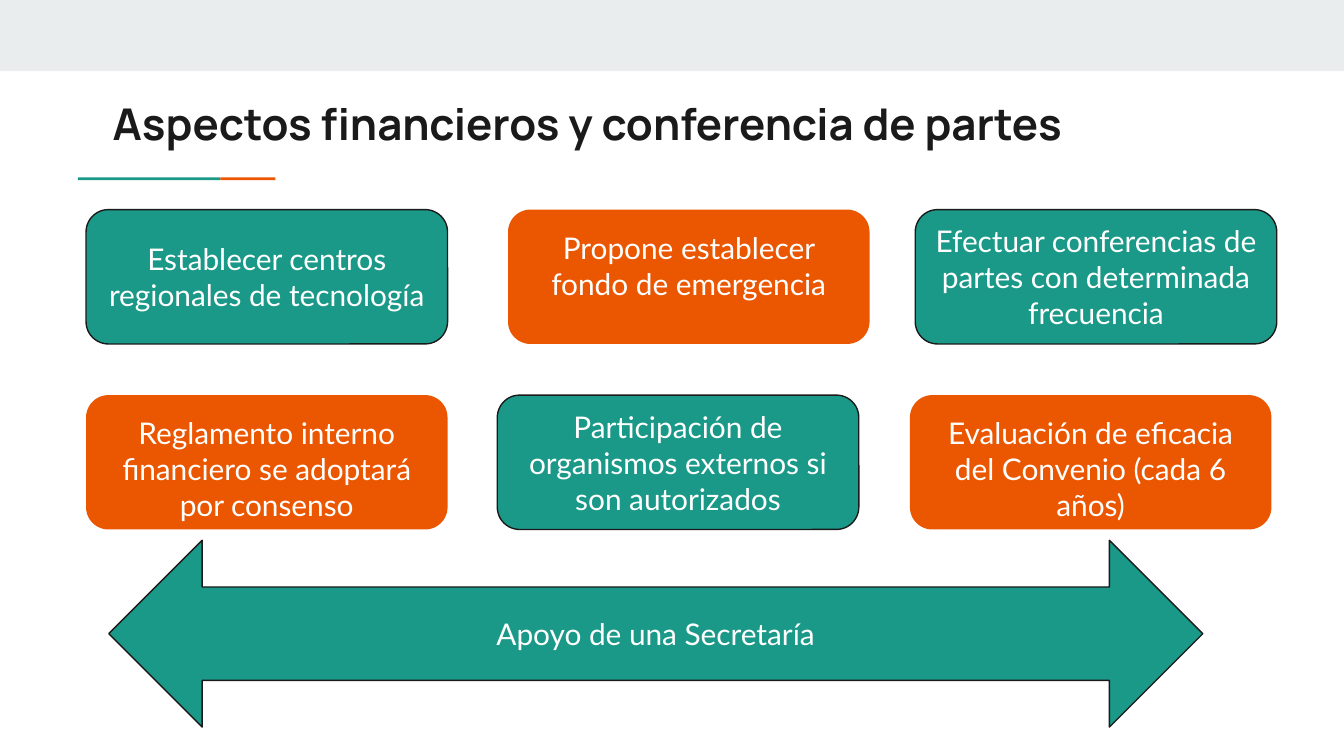
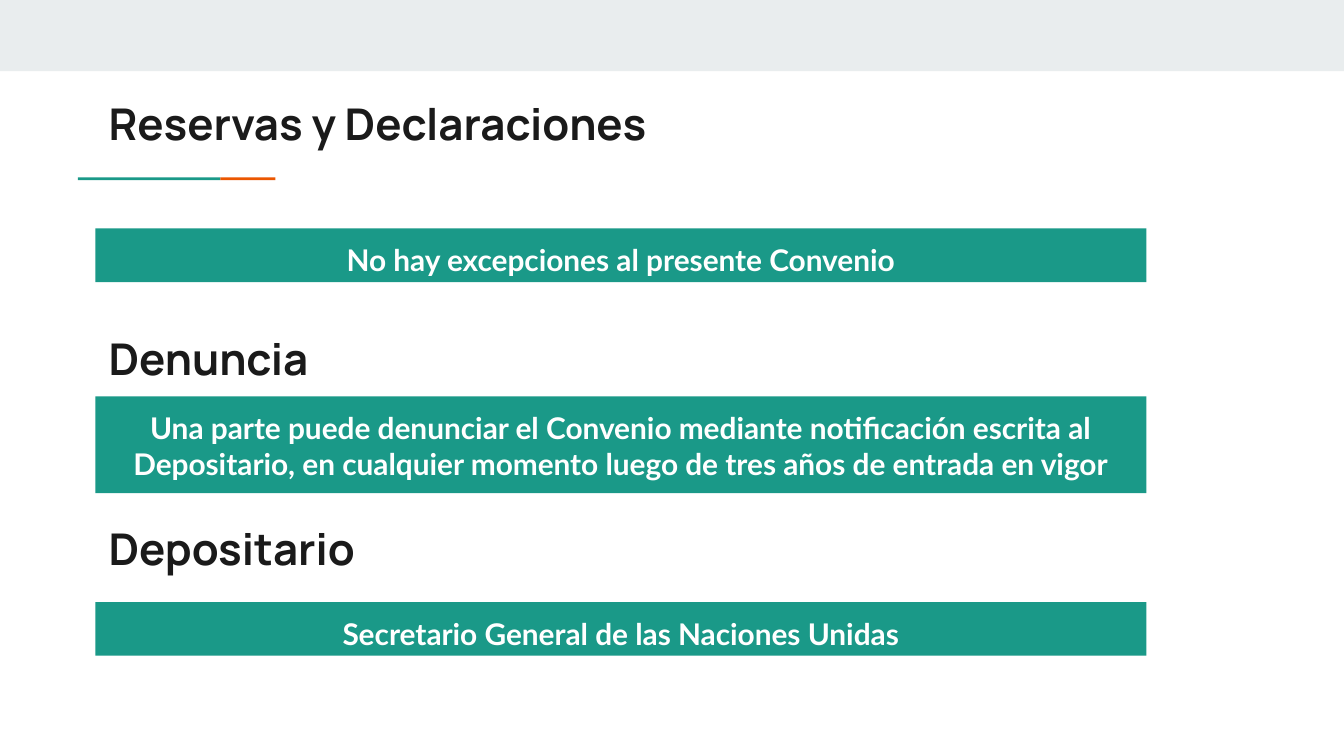
from dataclasses import dataclass

from pptx import Presentation
from pptx.dml.color import RGBColor
from pptx.enum.shapes import MSO_SHAPE
from pptx.enum.text import MSO_ANCHOR, PP_ALIGN
from pptx.util import Inches, Pt

RECT = MSO_SHAPE.RECTANGLE
CARD = MSO_SHAPE.FLOWCHART_ALTERNATE_PROCESS
ARROW = MSO_SHAPE.LEFT_RIGHT_ARROW
TOP, MIDDLE = MSO_ANCHOR.TOP, MSO_ANCHOR.MIDDLE
LEFT, CENTER = PP_ALIGN.LEFT, PP_ALIGN.CENTER


@dataclass(frozen=True)
class Theme:
    teal: RGBColor = RGBColor(0x1A, 0x99, 0x88)
    orange: RGBColor = RGBColor(0xEB, 0x56, 0x00)
    ink: RGBColor = RGBColor(0x1A, 0x1A, 0x1A)
    white: RGBColor = RGBColor(0xFF, 0xFF, 0xFF)
    band: RGBColor = RGBColor(0xE9, 0xED, 0xEE)
    title_font: str = "Manrope"
    body_font: str = "Lato"
    title_size: float = 23.4
    body_size: float = 16
    outline: float = 0.75
    inset: float = 0.1


THEME = Theme()
SLIDE_W = 10
SLIDE_H = SLIDE_W * 9 / 16
TITLE_W, TITLE_H = 8.41, 0.59

TITLE_STYLE = {"name": THEME.title_font, "size": Pt(THEME.title_size), "bold": True}
BODY_STYLE = {"name": THEME.body_font, "size": Pt(THEME.body_size), "bold": False}
STRONG_STYLE = {**BODY_STYLE, "bold": True}

CARD_ROWS = [
    (1.56, [
        (0.64, "Establecer centros regionales de tecnología"),
        (3.78, "Propone establecer fondo de emergencia"),
        (6.81, "Efectuar conferencias de partes con determinada frecuencia"),
    ]),
    (2.94, [
        (0.64, "Reglamento interno financiero se adoptará por consenso"),
        (3.70, "Participación de organismos externos si son autorizados"),
        (6.77, "Evaluación de eficacia del Convenio (cada 6 años)"),
    ]),
]

# Heading top, bar top, bar height, heading, statement
SECTIONS = [
    (0.62, 1.70, 0.40, "Reservas y Declaraciones",
     "No hay excepciones al presente Convenio"),
    (2.37, 2.95, 0.72, "Denuncia",
     "Una parte puede denunciar el Convenio mediante notificación escrita al "
     "Depositario, en cualquier momento luego de tres años de entrada en vigor"),
    (3.78, 4.48, 0.40, "Depositario",
     "Secretario General de las Naciones Unidas"),
]


def write(holder, text, style, color, align, anchor):
    frame = holder.text_frame
    inset = Inches(THEME.inset)
    frame_format = {
        "word_wrap": True, "vertical_anchor": anchor,
        "margin_left": inset, "margin_right": inset,
        "margin_top": inset, "margin_bottom": inset,
    }
    for key, value in frame_format.items():
        setattr(frame, key, value)
    paragraph = frame.paragraphs[0]
    paragraph.alignment = align
    run = paragraph.add_run()
    run.text = text
    for key, value in style.items():
        setattr(run.font, key, value)
    run.font.color.rgb = color


def add_block(slide, preset, box, fill, outlined=False):
    block = slide.shapes.add_shape(preset, *map(Inches, box))
    block.shadow.inherit = False
    block.fill.solid()
    block.fill.fore_color.rgb = fill
    if outlined:
        block.line.color.rgb = THEME.ink
        block.line.width = Pt(THEME.outline)
    else:
        block.line.fill.background()
    return block


def add_heading(slide, left, top, text):
    heading = slide.shapes.add_textbox(*map(Inches, (left, top, TITLE_W, TITLE_H)))
    write(heading, text, TITLE_STYLE, THEME.ink, LEFT, TOP)


def add_base_slide(deck):
    """Blank slide with the top band and the two-colour rule."""
    slide = deck.slides.add_slide(deck.slide_layouts[6])
    add_block(slide, RECT, (0, 0, SLIDE_W, 0.53), THEME.band)
    left, top, height = 0.58, 1.32, 0.02
    for width, color in ((1.06, THEME.teal), (0.41, THEME.orange)):
        add_block(slide, RECT, (left, top, width, height), color)
        left += width
    return slide


def add_card(slide, box, text, is_teal):
    """Teal cards are outlined and centred; orange ones start at the top."""
    fill = THEME.teal if is_teal else THEME.orange
    card = add_block(slide, CARD, box, fill, outlined=is_teal)
    write(card, text, BODY_STYLE, THEME.white, CENTER, MIDDLE if is_teal else TOP)


def add_support_arrow(slide, box, text):
    arrow = add_block(slide, ARROW, box, THEME.teal, outlined=True)
    write(arrow, text, BODY_STYLE, THEME.white, CENTER, MIDDLE)


def add_section(slide, left, section):
    heading_top, bar_top, bar_height, heading, statement = section
    add_heading(slide, left, heading_top, heading)
    bar = add_block(slide, RECT, (left, bar_top, 7.82, bar_height), THEME.teal)
    write(bar, statement, STRONG_STYLE, THEME.white, CENTER, TOP)


def build_finance_slide(deck):
    slide = add_base_slide(deck)
    add_heading(slide, 0.74, 0.62, "Aspectos financieros y conferencia de partes")
    # Cards alternate in colour like a chessboard
    for row, (top, cards) in enumerate(CARD_ROWS):
        for column, (left, text) in enumerate(cards):
            add_card(slide, (left, top, 2.69, 1), text, (row + column) % 2 == 0)
    add_support_arrow(slide, (0.81, 4.02, 8.14, 1.39), "Apoyo de una Secretaría")


def build_reservations_slide(deck):
    slide = add_base_slide(deck)
    for section in SECTIONS:
        add_section(slide, 0.71, section)


def main():
    deck = Presentation()
    deck.slide_width, deck.slide_height = Inches(SLIDE_W), Inches(SLIDE_H)
    build_finance_slide(deck)
    build_reservations_slide(deck)
    deck.save("out.pptx")


if __name__ == "__main__":
    main()
